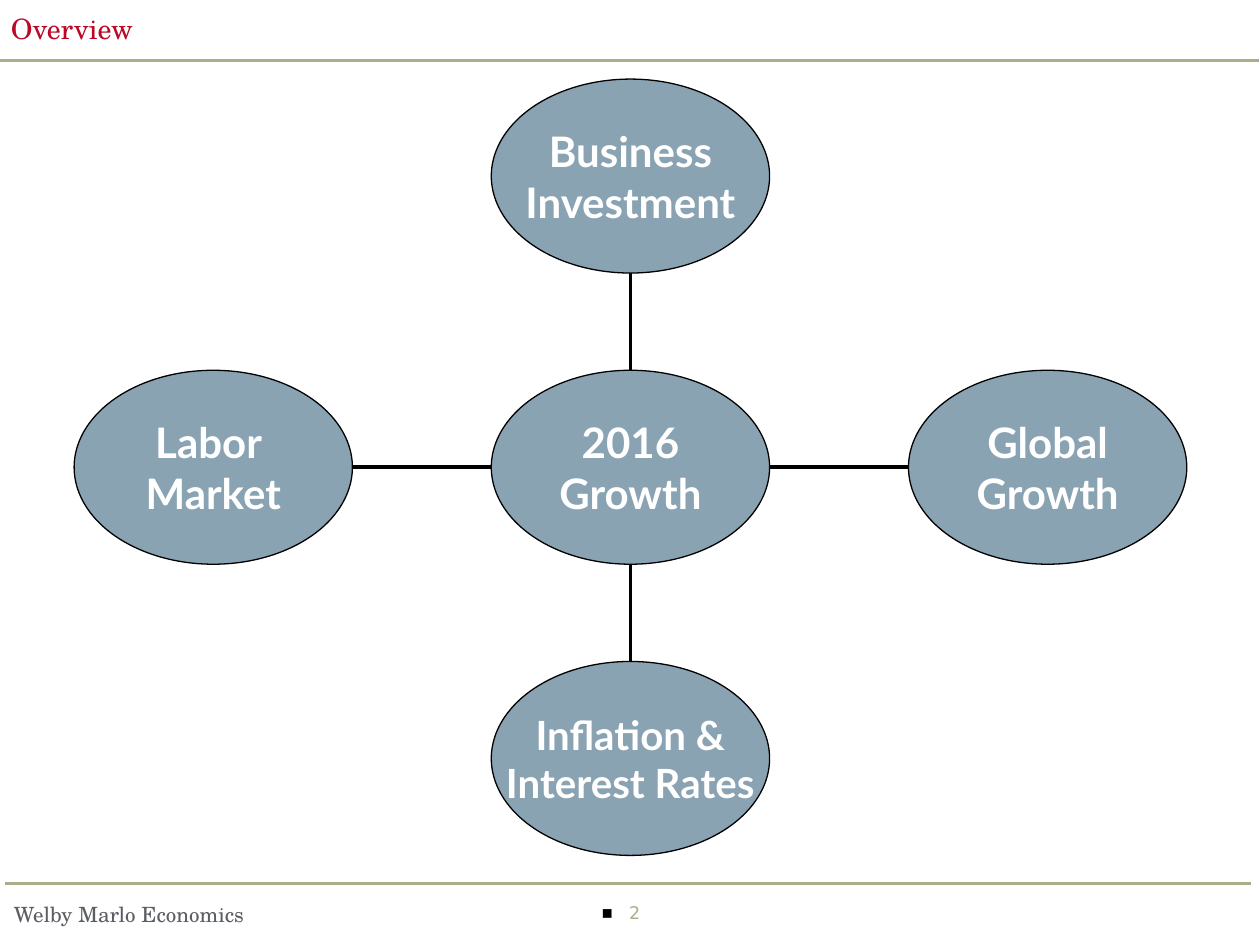
from dataclasses import dataclass

from lxml import etree
from pptx import Presentation
from pptx.dml.color import RGBColor
from pptx.enum.shapes import MSO_CONNECTOR, MSO_SHAPE
from pptx.enum.text import MSO_ANCHOR, MSO_AUTO_SIZE, PP_ALIGN
from pptx.oxml.ns import qn
from pptx.util import Cm, Pt

STRAIGHT = MSO_CONNECTOR.STRAIGHT
ELLIPSE = MSO_SHAPE.OVAL
TOP, MIDDLE = MSO_ANCHOR.TOP, MSO_ANCHOR.MIDDLE
LEFT, CENTER = PP_ALIGN.LEFT, PP_ALIGN.CENTER
NO_AUTOFIT = MSO_AUTO_SIZE.NONE
TITLE_ONLY = 5


@dataclass(frozen=True)
class Theme:
    serif: str = "TeX Gyre Schola"
    sans: str = "DejaVu Sans"
    label: str = "Lato"
    red: str = "BB0826"
    olive: str = "A9B089"
    gray: str = "5A5D62"
    blue: str = "8AA3B3"
    black: str = "000000"
    white: str = "FFFFFF"
    title_size: float = 16
    footer_size: float = 12
    number_size: float = 10
    topic_size: float = 24
    tight_topic_size: float = 23
    rule_width: float = 2
    spoke_width: float = 2.25
    outline_width: float = 0.75


@dataclass(frozen=True)
class Topic:
    """A topic and its step from the hub, in columns and rows."""
    lines: tuple[str, ...]
    column: int
    row: int
    size: float


THEME = Theme()

# Diagram grid, in centimetres
HUB_X, HUB_Y = 12.71, 9.42
STEP_X, STEP_Y = 8.41, 5.87
TOPIC_W, TOPIC_H = 5.61, 3.91

HUB = Topic(("2016", "Growth"), 0, 0, THEME.topic_size)
DRIVERS = (
    Topic(("Labor ", "Market"), -1, 0, THEME.topic_size),
    Topic(("Inflation &", "Interest Rates"), 0, 1, THEME.tight_topic_size),
    Topic(("Global", "Growth"), 1, 0, THEME.topic_size),
    Topic(("Business", "Investment"), 0, -1, THEME.topic_size),
)


def write(frame, *lines: str, font: str, size: float, color: str,
          bold: bool = False, align=LEFT, anchor=TOP, wrap: bool = True,
          inset: tuple[float, float] = (0.28, 0.15)) -> None:
    """Fill a text frame, one paragraph per line."""
    frame.auto_size = NO_AUTOFIT
    frame.word_wrap = wrap
    frame.vertical_anchor = anchor
    frame.margin_left = frame.margin_right = Cm(inset[0])
    frame.margin_top = frame.margin_bottom = Cm(inset[1])
    for index, line in enumerate(lines):
        paragraph = frame.add_paragraph() if index else frame.paragraphs[0]
        paragraph.alignment = align
        run = paragraph.add_run()
        run.text = line
        run.font.name = font
        run.font.size = Pt(size)
        run.font.bold = bold
        run.font.color.rgb = RGBColor.from_string(color)


def draw_line(slide, start: tuple[float, float], end: tuple[float, float],
              color: str, width: float) -> None:
    line = slide.shapes.add_connector(
        STRAIGHT, *(Cm(value) for value in (*start, *end)))
    line.line.color.rgb = RGBColor.from_string(color)
    line.line.width = Pt(width)
    etree.SubElement(line._element.spPr, qn("a:effectLst"))


def draw_topic(slide, topic: Topic) -> None:
    left = HUB_X + topic.column * STEP_X - TOPIC_W / 2
    top = HUB_Y + topic.row * STEP_Y - TOPIC_H / 2
    oval = slide.shapes.add_shape(
        ELLIPSE, Cm(left), Cm(top), Cm(TOPIC_W), Cm(TOPIC_H))
    oval.shadow.inherit = False
    oval.fill.solid()
    oval.fill.fore_color.rgb = RGBColor.from_string(THEME.blue)
    oval.line.color.rgb = RGBColor.from_string(THEME.black)
    oval.line.width = Pt(THEME.outline_width)
    write(oval.text_frame, *topic.lines, font=THEME.label, size=topic.size,
          color=THEME.white, bold=True, align=CENTER, anchor=MIDDLE,
          wrap=False, inset=(0, 0))


def draw_spoke(slide, topic: Topic) -> None:
    """Join the hub's edge to the facing edge of a topic."""
    start = (HUB_X + topic.column * TOPIC_W / 2,
             HUB_Y + topic.row * TOPIC_H / 2)
    end = (HUB_X + topic.column * (STEP_X - TOPIC_W / 2),
           HUB_Y + topic.row * (STEP_Y - TOPIC_H / 2))
    draw_line(slide, start, end, THEME.black, THEME.spoke_width)


def add_square_bullet(paragraph, color: str) -> None:
    properties = paragraph._p.get_or_add_pPr()
    properties.set("marL", str(Cm(0.14)))
    properties.set("indent", str(Cm(-0.56)))
    bullet_color = etree.SubElement(properties, qn("a:buClr"))
    etree.SubElement(bullet_color, qn("a:srgbClr"), val=color)
    etree.SubElement(properties, qn("a:buFont"), typeface=THEME.sans)
    etree.SubElement(properties, qn("a:buChar"), char="▪")


def draw_title(slide) -> None:
    title = slide.shapes.title
    title.left, title.top = Cm(-0.03), Cm(0.1)
    title.width, title.height = Cm(23.9), Cm(1)
    write(title.text_frame, "Overview", font=THEME.serif,
          size=THEME.title_size, color=THEME.red, inset=(0.25, 0.13))


def draw_footer(slide) -> None:
    owner = slide.shapes.add_textbox(Cm(0), Cm(18.03), Cm(11.13), Cm(0.79))
    write(owner.text_frame, "Welby Marlo Economics", font=THEME.serif,
          size=THEME.footer_size, color=THEME.gray)
    number = slide.shapes.add_textbox(Cm(11.43), Cm(18.03), Cm(2.49), Cm(0.91))
    add_square_bullet(number.text_frame.paragraphs[0], THEME.black)
    write(number.text_frame, "2", font=THEME.sans, size=THEME.number_size,
          color=THEME.olive, align=CENTER)


def main() -> None:
    deck = Presentation()
    deck.slide_width, deck.slide_height = Cm(25.4), Cm(19.05)
    slide = deck.slides.add_slide(deck.slide_layouts[TITLE_ONLY])

    # Page frame
    draw_line(slide, (0.1, 17.81), (25.22, 17.81), THEME.olive, THEME.rule_width)
    draw_line(slide, (-0.03, 1.22), (25.37, 1.22), THEME.olive, THEME.rule_width)
    draw_footer(slide)
    draw_title(slide)

    # Growth and its drivers
    for driver in DRIVERS:
        draw_spoke(slide, driver)
        draw_topic(slide, driver)
    draw_topic(slide, HUB)

    deck.save("out.pptx")


if __name__ == "__main__":
    main()
